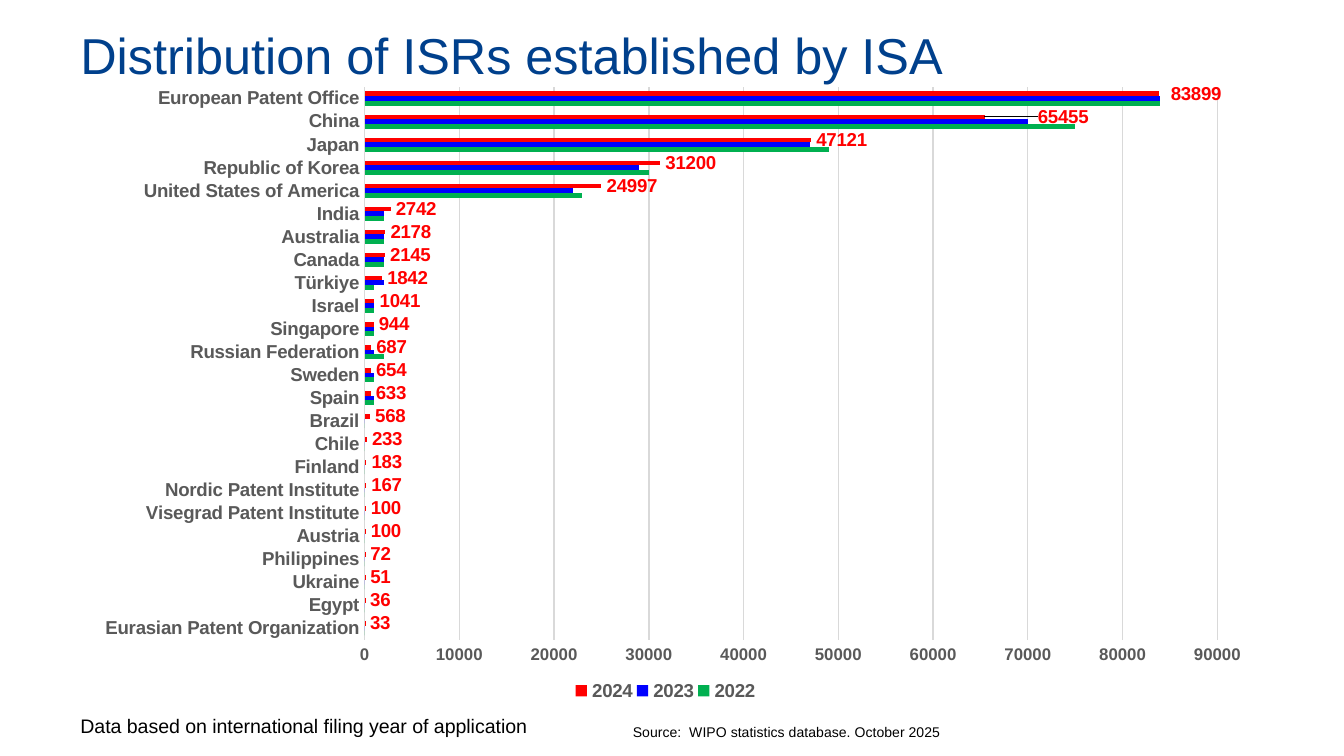
import dataclasses

import pptx
import pptx.chart.data
import pptx.dml.color
import pptx.enum.chart
import pptx.enum.text
import pptx.oxml
import pptx.oxml.ns
import pptx.util

WIDTH = 10
HEIGHT = WIDTH * 9 / 16


@dataclasses.dataclass(frozen=True)
class Theme:
    font: str = "Arial"
    heading: str = "00408C"
    body: str = "000000"
    axis: str = "595959"
    grid: str = "D9D9D9"
    latest: str = "FF0000"
    previous: str = "0000FF"
    oldest: str = "00B050"
    title_size: float = 27
    note_size: float = 10.5
    source_size: float = 7.5
    label_size: float = 10
    scale_size: float = 9
    line: float = 0.75


THEME = Theme()
YEAR_COLORS = {"2022": THEME.oldest, "2023": THEME.previous, "2024": THEME.latest}

# Authority: reports in 2022, 2023 and 2024, from the bottom bar to the top
REPORTS = {
    "Eurasian Patent Organization": (0, 0, 33),
    "Egypt": (0, 0, 36),
    "Ukraine": (0, 0, 51),
    "Philippines": (0, 0, 72),
    "Austria": (0, 0, 100),
    "Visegrad Patent Institute": (0, 0, 100),
    "Nordic Patent Institute": (0, 0, 167),
    "Finland": (0, 0, 183),
    "Chile": (0, 0, 233),
    "Brazil": (0, 0, 568),
    "Spain": (1000, 1000, 633),
    "Sweden": (1000, 1000, 654),
    "Russian Federation": (2000, 1000, 687),
    "Singapore": (1000, 1000, 944),
    "Israel": (1000, 1000, 1041),
    "Türkiye": (1000, 2000, 1842),
    "Canada": (2000, 2000, 2145),
    "Australia": (2000, 2000, 2178),
    "India": (2000, 2000, 2742),
    "United States of America": (23000, 22000, 24997),
    "Republic of Korea": (30000, 29000, 31200),
    "Japan": (49000, 47000, 47121),
    "China": (75000, 70000, 65455),
    "European Patent Office": (84000, 84000, 83899),
}
# Labels moved right, as shares of the chart's width
LABEL_SHIFTS = {"China": 0.04, "European Patent Office": 0.005}

NO_LEADER_LINES = (
    f'<c:extLst {pptx.oxml.ns.nsdecls("c")}>'
    '<c:ext uri="{CE6537A1-D6FC-4f65-9D91-7224C49458BB}"'
    ' xmlns:c15="http://schemas.microsoft.com/office/drawing/2012/chart">'
    '<c15:showLeaderLines val="0"/></c:ext></c:extLst>')


def rgb(color):
    return pptx.dml.color.RGBColor.from_string(color)


def box(left, top, width, height):
    """Turn shares of the slide's size into lengths."""
    return [pptx.util.Inches(share * side) for share, side in
            zip((left, top, width, height), (WIDTH, HEIGHT) * 2)]


def style_font(font, size, color, bold=False):
    font.name = THEME.font
    font.size = pptx.util.Pt(size)
    font.bold = bold
    font.color.rgb = rgb(color)


def style_line(line):
    line.color.rgb = rgb(THEME.grid)
    line.width = pptx.util.Pt(THEME.line)


def add_text(slide, place, text, size, color, wrap=True):
    frame = slide.shapes.add_textbox(*box(*place)).text_frame
    frame.word_wrap = wrap
    frame.vertical_anchor = pptx.enum.text.MSO_ANCHOR.MIDDLE
    frame.text = text
    style_font(frame.paragraphs[0].runs[0].font, size, color)


def set_layout(element, index, **settings):
    """Give a chart part a manual layout as its child number index."""
    for old in element.findall(pptx.oxml.ns.qn("c:layout")):
        element.remove(old)
    layout = pptx.oxml.parse_xml(
        f"<c:layout {pptx.oxml.ns.nsdecls('c')}><c:manualLayout/></c:layout>")
    for tag, value in settings.items():
        layout[0].append(pptx.oxml.parse_xml(
            f'<c:{tag} {pptx.oxml.ns.nsdecls("c")} val="{value}"/>'))
    element.insert(index, layout)


def style_axes(chart):
    authorities, scale = chart.category_axis, chart.value_axis
    for axis, size in ((authorities, THEME.label_size), (scale, THEME.scale_size)):
        axis.major_tick_mark = pptx.enum.chart.XL_TICK_MARK.NONE
        axis.minor_tick_mark = pptx.enum.chart.XL_TICK_MARK.NONE
        style_font(axis.tick_labels.font, size, THEME.axis, bold=True)
    style_line(authorities.format.line)
    scale.format.line.fill.background()
    scale.minimum_scale, scale.maximum_scale, scale.major_unit = 0, 90000, 10000
    scale.has_major_gridlines = True
    style_line(scale.major_gridlines.format.line)


def label_latest(series):
    outside = pptx.enum.chart.XL_LABEL_POSITION.OUTSIDE_END
    labels = series.data_labels
    labels.show_value = True
    labels.position = outside
    style_font(labels.font, THEME.label_size, THEME.latest, bold=True)
    for index, authority in enumerate(REPORTS):
        if authority in LABEL_SHIFTS:
            label = series.points[index].data_label
            style_font(label.font, THEME.label_size, THEME.latest, bold=True)
            label.position = outside
            element = labels._element.findall(pptx.oxml.ns.qn("c:dLbl"))[-1]
            set_layout(element, 1, x=LABEL_SHIFTS[authority], y=0)
    labels._element.append(pptx.oxml.parse_xml(NO_LEADER_LINES))


def add_legend(chart):
    chart.has_legend = True
    legend = chart.legend
    legend.position = pptx.enum.chart.XL_LEGEND_POSITION.BOTTOM
    legend.include_in_layout = False
    style_font(legend.font, THEME.label_size, THEME.axis, bold=True)
    set_layout(legend._element, 1, xMode="edge", yMode="edge",
               x=0.416, y=0.935, w=0.157, h=0.05)


def add_reports_chart(slide, place):
    data = pptx.chart.data.CategoryChartData(number_format="General")
    data.categories = list(REPORTS)
    for year, counts in zip(YEAR_COLORS, zip(*REPORTS.values())):
        data.add_series(year, counts)
    chart = slide.shapes.add_chart(
        pptx.enum.chart.XL_CHART_TYPE.BAR_CLUSTERED, *box(*place), data).chart
    chart.has_title = False
    style_font(chart.font, THEME.label_size, THEME.body)
    bars = chart.plots[0]
    bars.gap_width, bars.overlap = 182, 0
    bars.vary_by_categories = False
    for series in bars.series:
        series.format.fill.solid()
        series.format.fill.fore_color.rgb = rgb(YEAR_COLORS[series.name])
    label_latest(bars.series[-1])
    style_axes(chart)
    set_layout(bars._element.getparent(), 0, layoutTarget="inner",
               xMode="edge", yMode="edge", x=0.243, y=0.025, w=0.713, h=0.856)
    add_legend(chart)


def main():
    deck = pptx.Presentation()
    deck.slide_width = pptx.util.Inches(WIDTH)
    deck.slide_height = pptx.util.Inches(HEIGHT)
    slide = deck.slides.add_slide(deck.slide_layouts[6])
    add_text(slide, (0.05, 0.024, 0.9, 0.096), "Distribution of ISRs established by ISA",
             THEME.title_size, THEME.heading)
    add_text(slide, (0.461, 0.948, 0.375, 0.041),
             "Source:  WIPO statistics database. October 2025",
             THEME.source_size, THEME.body)
    add_text(slide, (0.05, 0.935, 0.359, 0.05),
             "Data based on international filing year of application",
             THEME.note_size, THEME.body, wrap=False)
    add_reports_chart(slide, (0.055, 0.094, 0.89, 0.854))
    deck.save("out.pptx")


if __name__ == "__main__":
    main()
